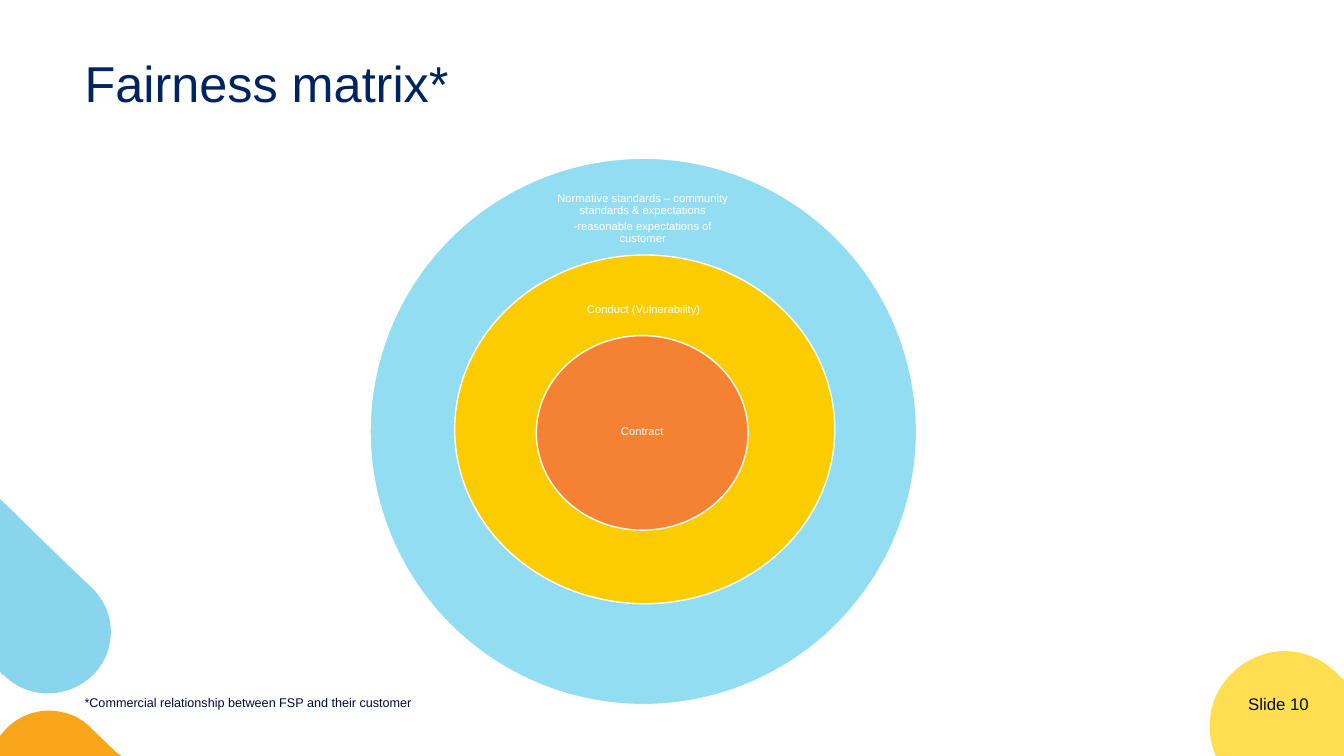
"""Build the fairness matrix slide with its nested circles."""
from dataclasses import dataclass

from lxml import etree
from pptx import Presentation
from pptx.dml.color import RGBColor
from pptx.enum.shapes import MSO_SHAPE
from pptx.enum.text import MSO_ANCHOR, PP_ALIGN
from pptx.oxml.ns import qn
from pptx.util import Inches, Pt

OVAL = MSO_SHAPE.OVAL
MIDDLE = MSO_ANCHOR.MIDDLE
LEFT, CENTER, RIGHT = PP_ALIGN.LEFT, PP_ALIGN.CENTER, PP_ALIGN.RIGHT
FONT = "Arial"
COLORS = {
    "title": "00245F",
    "body": "00093C",
    "white": "FFFFFF",
    "normative": "92DDF2",
    "conduct": "FBCD00",
    "contract": "F58233",
    "yellow_corner": "FFDF4F",
    "orange_corner": "FAA61A",
    "blue_corner": "8AD5EE",
}

Area = tuple[float, float, float, float]
Point = tuple[float, float]


@dataclass(frozen=True)
class Ring:
    color: str
    area: Area
    label_area: Area
    lines: tuple[str, ...]


@dataclass(frozen=True)
class Corner:
    """Outline whose segments hold two numbers for a line, six for a curve."""
    color: str
    area: Area
    start: Point
    segments: tuple[tuple[float, ...], ...]


CORNERS = (
    Corner("yellow_corner", (12, 6.46, 1.33, 1.04), (12.74, 6.46), (
        (12.93, 6.46, 13.12, 6.54, 13.26, 6.68),
        (13.26, 6.68, 13.26, 6.68, 13.32, 6.74),
        (13.33, 6.75), (13.33, 7.5), (13.31, 7.5),
        (13.13, 7.5, 12.78, 7.5, 12.06, 7.5),
        (11.94, 7.23, 11.99, 6.9, 12.22, 6.68),
        (12.36, 6.54, 12.55, 6.46, 12.74, 6.46))),
    Corner("orange_corner", (0, 7.05, 1.21, 0.45), (0.49, 7.05), (
        (0.64, 7.05, 0.8, 7.11, 0.91, 7.23),
        (0.91, 7.23, 0.91, 7.23, 1.16, 7.47),
        (1.21, 7.5), (0, 7.5), (0, 7.3), (0.06, 7.23),
        (0.18, 7.11, 0.33, 7.05, 0.49, 7.05))),
    Corner("blue_corner", (0, 4.95, 1.1, 1.93), (0, 4.95), (
        (0.03, 4.98), (0.12, 5.06, 0.33, 5.28, 0.92, 5.84),
        (1.16, 6.08, 1.16, 6.46, 0.92, 6.7),
        (0.67, 6.94, 0.28, 6.94, 0.04, 6.7),
        (0.04, 6.7, 0.04, 6.7, 0.02, 6.69), (0, 6.66))),
)

RINGS = (
    Ring("normative", (3.67, 1.57, 5.42, 5.42), (5.43, 1.84, 1.89, 0.66),
         ("Normative standards – community standards & expectations",
          "-reasonable expectations of customer")),
    Ring("conduct", (4.51, 2.53, 3.77, 3.46), (5.52, 2.75, 1.76, 0.65),
         ("Conduct (Vulnerability) ",)),
    Ring("contract", (5.32, 3.33, 2.1, 1.93), (5.63, 3.81, 1.48, 0.96),
         ("Contract",)),
)


def rgb(name: str) -> RGBColor:
    """Return a named colour."""
    return RGBColor.from_string(COLORS[name])


def add_corner(page, corner: Corner) -> None:
    """Draw one rounded corner decoration with true curves."""
    left, top, width, height = map(Inches, corner.area)
    builder = page.shapes.build_freeform(left, top)
    builder.add_line_segments(
        [(left + width, top), (left + width, top + height), (left, top + height)])
    shape = builder.convert_to_shape()
    outline = next(shape.element.iter(qn("a:path")))
    for command in list(outline):
        outline.remove(command)

    def add_command(tag: str, numbers: tuple[float, ...]) -> None:
        """Append one drawing command in local coordinates."""
        command = etree.SubElement(outline, qn(tag))
        for x, y in zip(numbers[::2], numbers[1::2]):
            etree.SubElement(command, qn("a:pt"),
                             x=str(Inches(x) - left), y=str(Inches(y) - top))

    add_command("a:moveTo", corner.start)
    for segment in corner.segments:
        add_command("a:lnTo" if len(segment) == 2 else "a:cubicBezTo", segment)
    add_command("a:close", ())
    shape.shadow.inherit = False
    shape.fill.solid()
    shape.fill.fore_color.rgb = rgb(corner.color)
    shape.line.fill.background()


def add_text(page, area: Area, *lines: str, size: float, color: str,
             align=LEFT, spacing: float = 1.0, after: float = 0,
             insets: Point = (0.1, 0.05)) -> None:
    """Add a wrapped text box with one paragraph for each line."""
    box = page.shapes.add_textbox(*map(Inches, area))
    frame = box.text_frame
    frame.word_wrap = True
    frame.vertical_anchor = MIDDLE
    frame.margin_left = frame.margin_right = Inches(insets[0])
    frame.margin_top = frame.margin_bottom = Inches(insets[1])
    for index, line in enumerate(lines):
        para = frame.add_paragraph() if index else frame.paragraphs[0]
        para.alignment = align
        para.line_spacing = spacing
        para.space_after = Pt(after)
        span = para.add_run()
        span.text = line
        span.font.name = FONT
        span.font.size = Pt(size)
        span.font.color.rgb = rgb(color)


def add_ring(page, ring: Ring) -> None:
    """Draw one ellipse and its label."""
    shape = page.shapes.add_shape(OVAL, *map(Inches, ring.area))
    shape.shadow.inherit = False
    shape.fill.solid()
    shape.fill.fore_color.rgb = rgb(ring.color)
    shape.line.color.rgb = rgb("white")
    shape.line.width = Pt(1)
    add_text(page, ring.label_area, *ring.lines, size=8, color="white",
             align=CENTER, spacing=0.9, after=2.8, insets=(0.06, 0.06))


def main() -> None:
    """Create and save the deck."""
    deck = Presentation()
    deck.slide_width, deck.slide_height = Inches(13.33), Inches(7.5)
    page = deck.slides.add_slide(deck.slide_layouts[6])
    for corner in CORNERS:
        add_corner(page, corner)
    add_text(page, (0.74, 0.53, 11.85, 0.65), "Fairness matrix*",
             size=36, color="title", spacing=0.9)
    for ring in RINGS:
        add_ring(page, ring)
    add_text(page, (11.8, 6.78, 1.28, 0.4), "Slide 10",
             size=12, color="body", align=RIGHT)
    add_text(page, (0.74, 6.77, 4.8, 0.4),
             "*Commercial relationship between FSP and their customer",
             size=9, color="body")
    deck.save("out.pptx")


if __name__ == "__main__":
    main()
